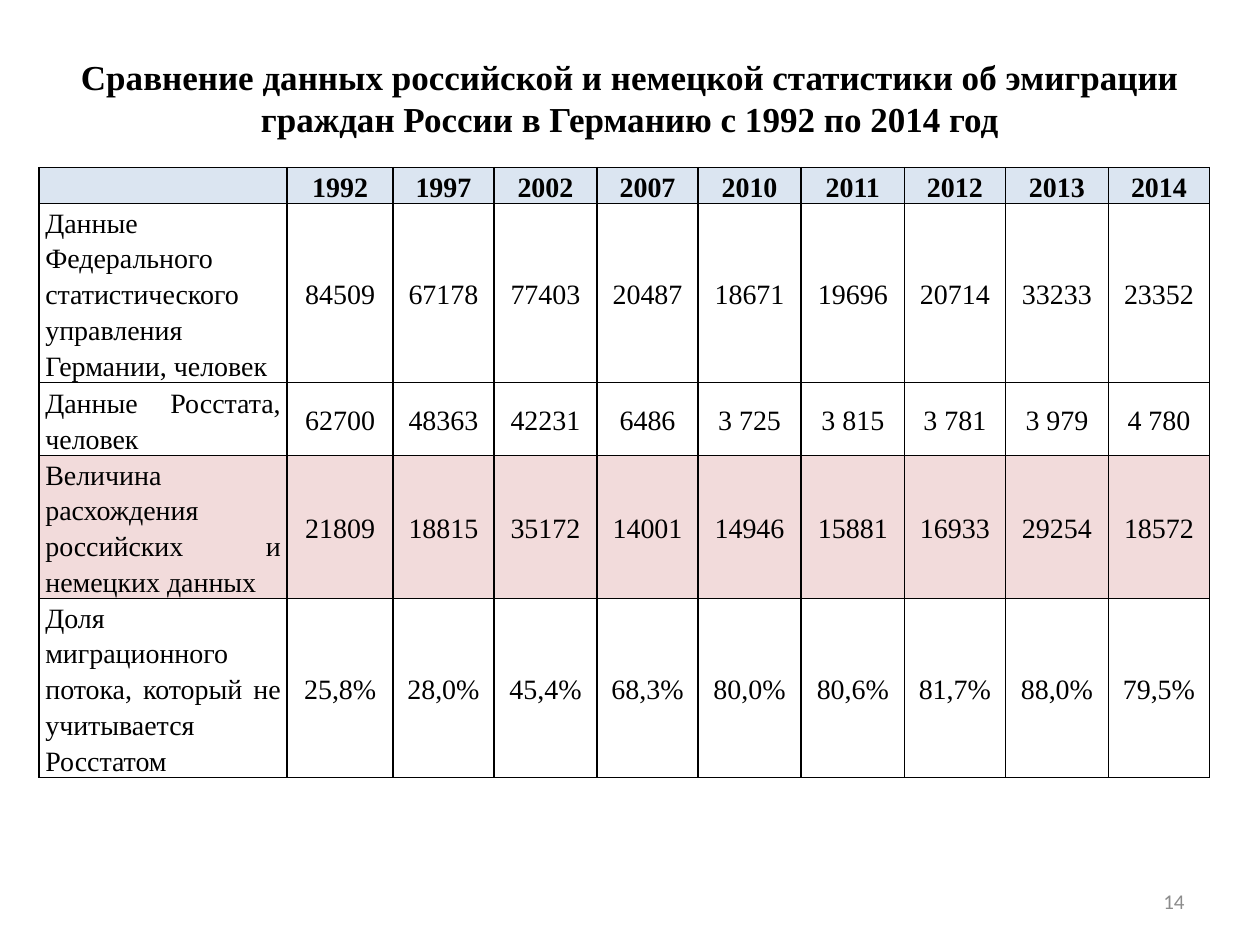
import pptx
import pptx.dml.color
import pptx.enum.text
import pptx.oxml
import pptx.oxml.ns
import pptx.util

ALIGN = pptx.enum.text.PP_ALIGN
ANCHOR = pptx.enum.text.MSO_ANCHOR
SERIF = "Times New Roman"
TITLE = ("Сравнение данных российской и немецкой статистики об эмиграции "
         "граждан России в Германию с 1992 по 2014 год")
YEARS = ["1992", "1997", "2002", "2007", "2010", "2011", "2012", "2013", "2014"]
INDICATORS = [
    ["Данные Федерального статистического управления Германии, человек",
     "84509", "67178", "77403", "20487", "18671", "19696", "20714", "33233", "23352"],
    ["Данные Росстата, человек",
     "62700", "48363", "42231", "6486", "3 725", "3 815", "3 781", "3 979", "4 780"],
    ["Величина расхождения российских и немецких данных",
     "21809", "18815", "35172", "14001", "14946", "15881", "16933", "29254", "18572"],
    ["Доля миграционного потока, который не учитывается Росстатом",
     "25,8%", "28,0%", "45,4%", "68,3%", "80,0%", "80,6%", "81,7%", "88,0%", "79,5%"],
]
COLUMN_WIDTHS = [1.97, 0.84, 0.8, 0.82, 0.8, 0.82, 0.82, 0.8, 0.82, 0.8]
ROW_HEIGHTS = [0.19, 1.01, 0.58, 0.97, 1.16]
ROW_FILLS = {0: "DBE5F1", 3: "F2DBDB"}


def rgb(code):
    """Turn a hex string into a colour."""
    return pptx.dml.color.RGBColor.from_string(code)


def apply(target, values):
    """Set each named attribute on the target."""
    for name, value in values.items():
        setattr(target, name, value)


def place(part, left, top, width, height):
    """Position a part in inches."""
    box = {"left": left, "top": top, "width": width, "height": height}
    apply(part, {name: pptx.util.Inches(value) for name, value in box.items()})


def write(frame, text, size, align, color="000000", font=SERIF, bold=False):
    """Write one formatted paragraph and return it."""
    paragraph = frame.paragraphs[0]
    paragraph.alignment = align
    if text:
        run = paragraph.add_run()
        run.text = text
        apply(run.font, {"size": pptx.util.Pt(size), "name": font, "bold": bold})
        run.font.color.rgb = rgb(color)
    else:
        paragraph._p.get_or_add_endParaRPr().set("sz", str(size * 100))
    return paragraph


def add_borders(cell, color="000000", points=1):
    """Draw a solid line on all four sides of a cell."""
    properties = cell._tc.get_or_add_tcPr()
    for position, side in enumerate(("lnL", "lnR", "lnT", "lnB")):
        properties.insert(position, pptx.oxml.parse_xml(
            f'<a:{side} {pptx.oxml.ns.nsdecls("a")} w="{pptx.util.Pt(points)}">'
            f'<a:solidFill><a:srgbClr val="{color}"/></a:solidFill></a:{side}>'))


def fill_cell(cell, text, row, column):
    """Format a cell by its role as year, indicator name or figure."""
    is_year, is_indicator = row == 0, row > 0 and column == 0
    apply(cell, {
        "margin_left": pptx.util.Inches(0.05), "margin_right": pptx.util.Inches(0.05),
        "margin_top": 0, "margin_bottom": 0,
        "vertical_anchor": ANCHOR.BOTTOM if is_year or is_indicator else ANCHOR.MIDDLE,
    })
    align = ALIGN.JUSTIFY if is_indicator else ALIGN.CENTER
    paragraph = write(cell.text_frame, text, 16, align, bold=is_year)
    apply(paragraph, {"line_spacing": 1.15,
                      "space_after": pptx.util.Pt(0 if is_indicator else 10)})
    if row in ROW_FILLS:
        cell.fill.solid()
        cell.fill.fore_color.rgb = rgb(ROW_FILLS[row])
    else:
        cell.fill.background()
    add_borders(cell)


def add_comparison(slide):
    """Add the table of German and Russian figures by year."""
    records = [["", *YEARS], *INDICATORS]
    area = [pptx.util.Inches(value) for value in (0.31, 1.33, 9.3, 5.21)]
    frame = slide.shapes.add_table(len(records), len(records[0]), *area)
    comparison = frame.table
    for column, width in zip(comparison.columns, COLUMN_WIDTHS):
        column.width = pptx.util.Inches(width)
    for row, height in zip(comparison.rows, ROW_HEIGHTS):
        row.height = pptx.util.Inches(height)
    for row, record in enumerate(records):
        for column, text in enumerate(record):
            fill_cell(comparison.cell(row, column), text, row, column)
    frame.height = area[3]


def add_title(slide):
    """Place and write the slide title."""
    heading = slide.shapes.title
    place(heading, 0.5, 0.3, 9, 0.95)
    heading.text_frame.vertical_anchor = ANCHOR.MIDDLE
    write(heading.text_frame, TITLE, 20, ALIGN.CENTER, bold=True)


def add_page_number(slide, number):
    """Write the page number at the lower right."""
    footer = slide.shapes.add_textbox(0, 0, 0, 0)
    place(footer, 7.17, 6.95, 2.33, 0.4)
    apply(footer.text_frame, {"word_wrap": True, "vertical_anchor": ANCHOR.MIDDLE})
    write(footer.text_frame, number, 12, ALIGN.RIGHT, "8C8C8C", "Calibri")


def main():
    """Build and save the slide."""
    deck = pptx.Presentation()
    apply(deck, {"slide_width": pptx.util.Inches(10), "slide_height": pptx.util.Inches(7.5)})
    slide = deck.slides.add_slide(deck.slide_layouts.get_by_name("Title Only"))
    add_title(slide)
    add_comparison(slide)
    add_page_number(slide, "14")
    deck.save("out.pptx")


if __name__ == "__main__":
    main()
